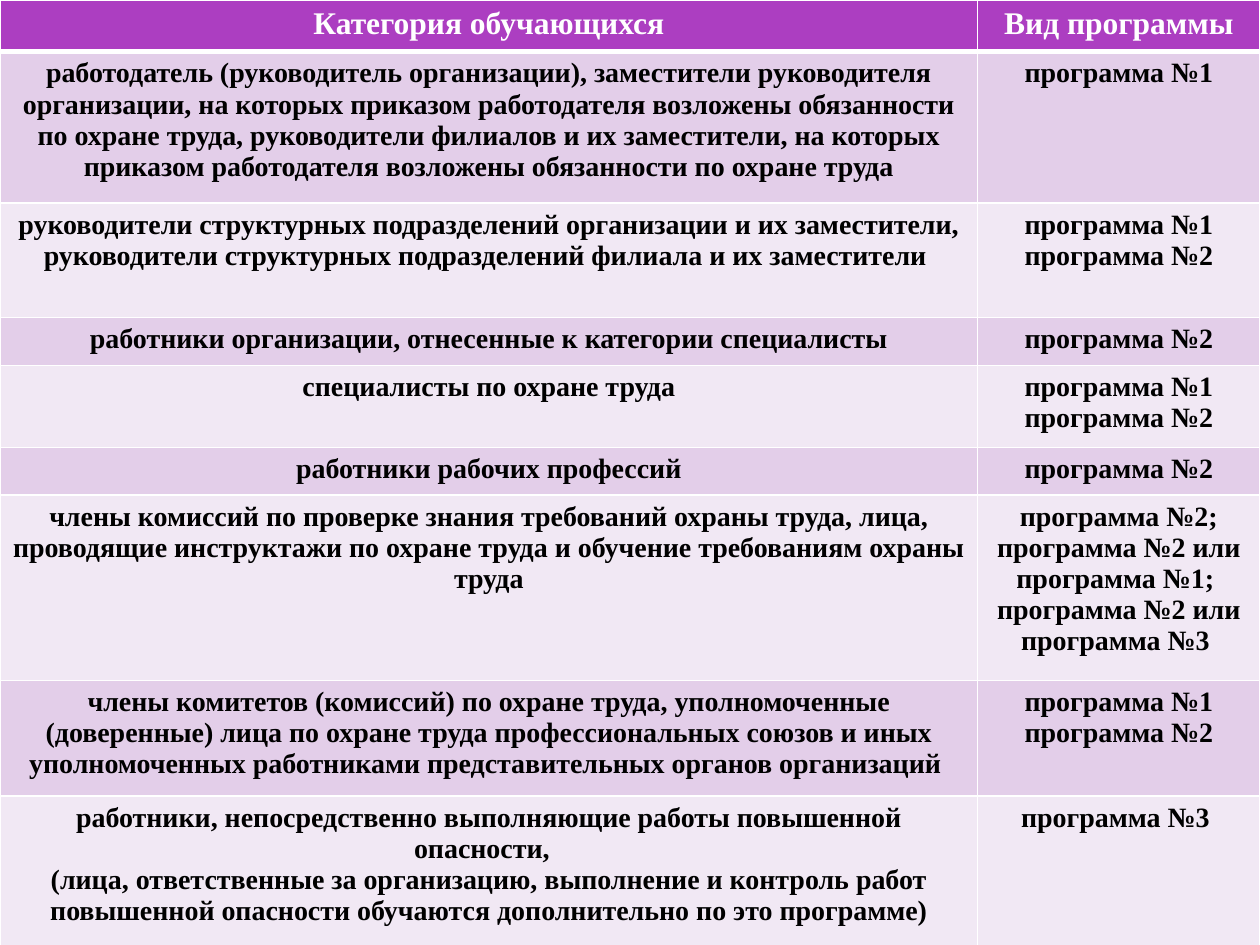
"""Build a slide with a table matching trainee categories to labour-safety programmes."""
from lxml import etree
from pptx import Presentation
from pptx.dml.color import RGBColor
from pptx.enum.text import PP_ALIGN
from pptx.oxml.ns import qn
from pptx.util import Inches, Pt

CENTER = PP_ALIGN.CENTER
FONT = "Times New Roman"
COLORS = {
    "background": "000000",
    "header": "AC3EC1",
    "odd": "E3CEE9",
    "even": "F1E8F4",
    "header_text": "FFFFFF",
    "body_text": "000000",
    "border": "FFFFFF",
}
SLIDE_W, SLIDE_H = 10, 7.5
COLUMN_SHARES = (0.776, 0.224)
HEADER_SIZE, BODY_SIZE = 18, 16
THIN, THICK = 1, 3

FIRST, SECOND, THIRD = "программа №1", "программа №2", "программа №3 "
ROWS = [
    (0.41, ["Категория обучающихся"], ["Вид программы"]),
    (1.2, ["работодатель (руководитель организации), заместители руководителя "
           "организации, на которых приказом работодателя возложены обязанности "
           "по охране труда, руководители филиалов и их заместители, на которых "
           "приказом работодателя возложены обязанности по охране труда"], [FIRST]),
    (0.91, ["руководители структурных подразделений организации и их заместители, "
            "руководители структурных подразделений филиала и их заместители "],
     [FIRST, SECOND]),
    (0.38, ["работники организации, отнесенные к категории специалисты"], [SECOND]),
    (0.65, ["специалисты по охране труда"], [FIRST, SECOND]),
    (0.38, ["работники рабочих профессий"], [SECOND]),
    (1.47, ["члены комиссий по проверке знания требований охраны труда, лица, "
            "проводящие инструктажи по охране труда и обучение требованиям охраны труда"],
     ["программа №2;", "программа №2 или программа №1; ",
      "программа №2 или программа №3 "]),
    (0.92, ["члены комитетов (комиссий) по охране труда, уполномоченные "
            "(доверенные) лица по охране труда профессиональных союзов и иных "
            "уполномоченных работниками представительных органов организаций "],
     [FIRST, SECOND]),
    (1.2, ["работники, непосредственно выполняющие работы повышенной опасности,  ",
           "(лица, ответственные за организацию, выполнение и контроль работ "
           "повышенной опасности обучаются дополнительно по это программе)"], [THIRD]),
]


def rgb(name):
    return RGBColor.from_string(COLORS[name])


def add_borders(cell, top, bottom):
    properties = cell._tc.get_or_add_tcPr()
    for side, width in (("L", THIN), ("R", THIN), ("T", top), ("B", bottom)):
        edge = etree.SubElement(properties, qn(f"a:ln{side}"), w=str(Pt(width)))
        paint = etree.SubElement(edge, qn("a:solidFill"))
        etree.SubElement(paint, qn("a:srgbClr"), val=COLORS["border"])


def write_cell(cell, lines, size, text_color, fill_color):
    cell.fill.solid()
    cell.fill.fore_color.rgb = rgb(fill_color)
    frame = cell.text_frame
    for index, line in enumerate(lines):
        paragraph = frame.add_paragraph() if index else frame.paragraphs[0]
        paragraph.alignment = CENTER
        run = paragraph.add_run()
        run.text = line
        run.font.name = FONT
        run.font.size = Pt(size)
        run.font.bold = True
        run.font.color.rgb = rgb(text_color)


def main():
    deck = Presentation()
    deck.slide_width, deck.slide_height = Inches(SLIDE_W), Inches(SLIDE_H)
    slide = deck.slides.add_slide(deck.slide_layouts[6])
    slide.background.fill.solid()
    slide.background.fill.fore_color.rgb = rgb("background")

    programmes = slide.shapes.add_table(
        len(ROWS), len(COLUMN_SHARES), 0, 0, Inches(SLIDE_W), Inches(SLIDE_H)
    ).table
    for column, share in zip(programmes.columns, COLUMN_SHARES):
        column.width = Inches(SLIDE_W * share)

    for index, (height, *texts) in enumerate(ROWS):
        programmes.rows[index].height = Inches(height)
        if index == 0:
            style = (HEADER_SIZE, "header_text", "header")
        else:
            style = (BODY_SIZE, "body_text", "odd" if index % 2 else "even")
        top = THICK if index == 1 else THIN
        bottom = THICK if index == 0 else THIN
        for cell, lines in zip(programmes.rows[index].cells, texts):
            add_borders(cell, top, bottom)
            write_cell(cell, lines, *style)

    deck.save("out.pptx")


if __name__ == "__main__":
    main()
